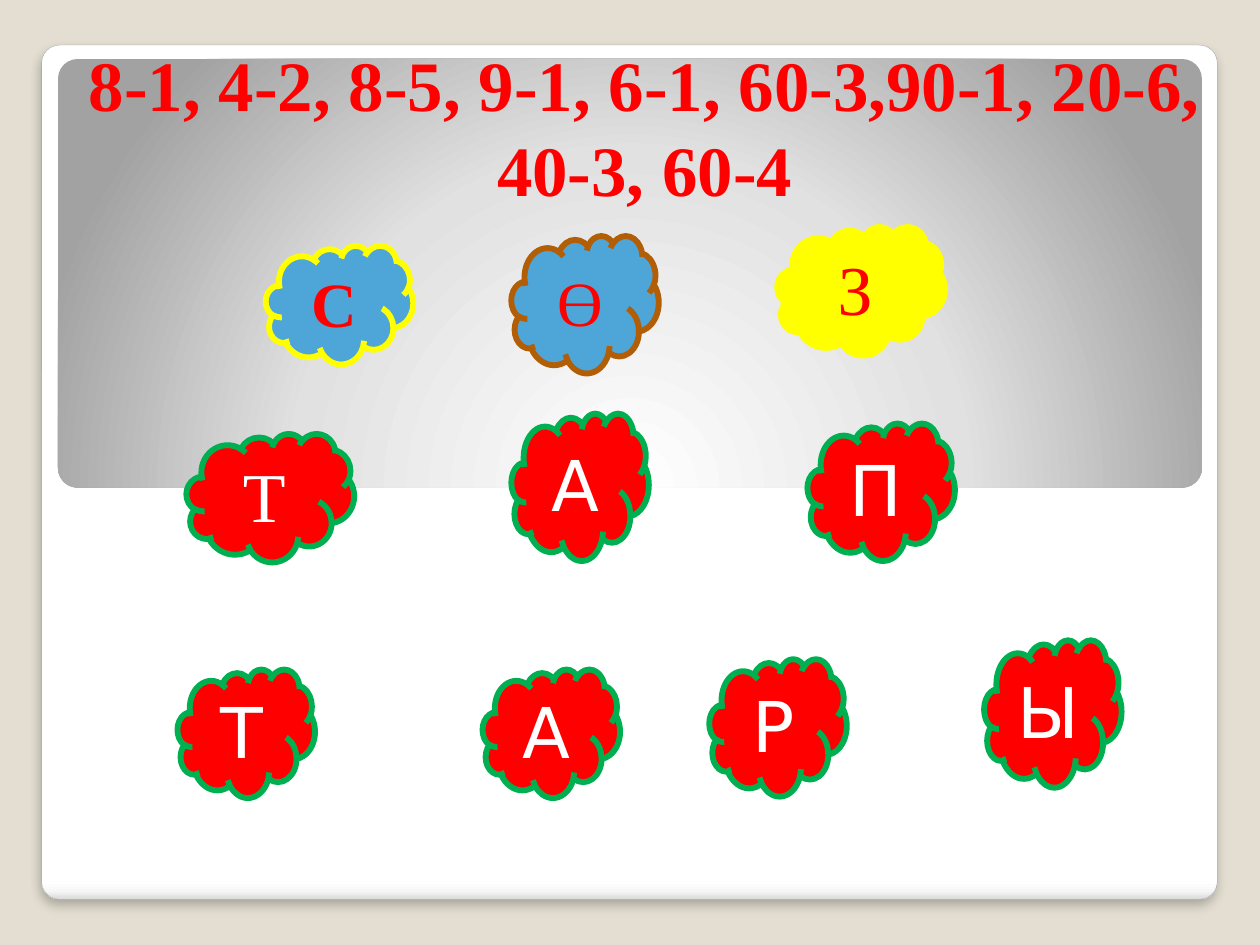
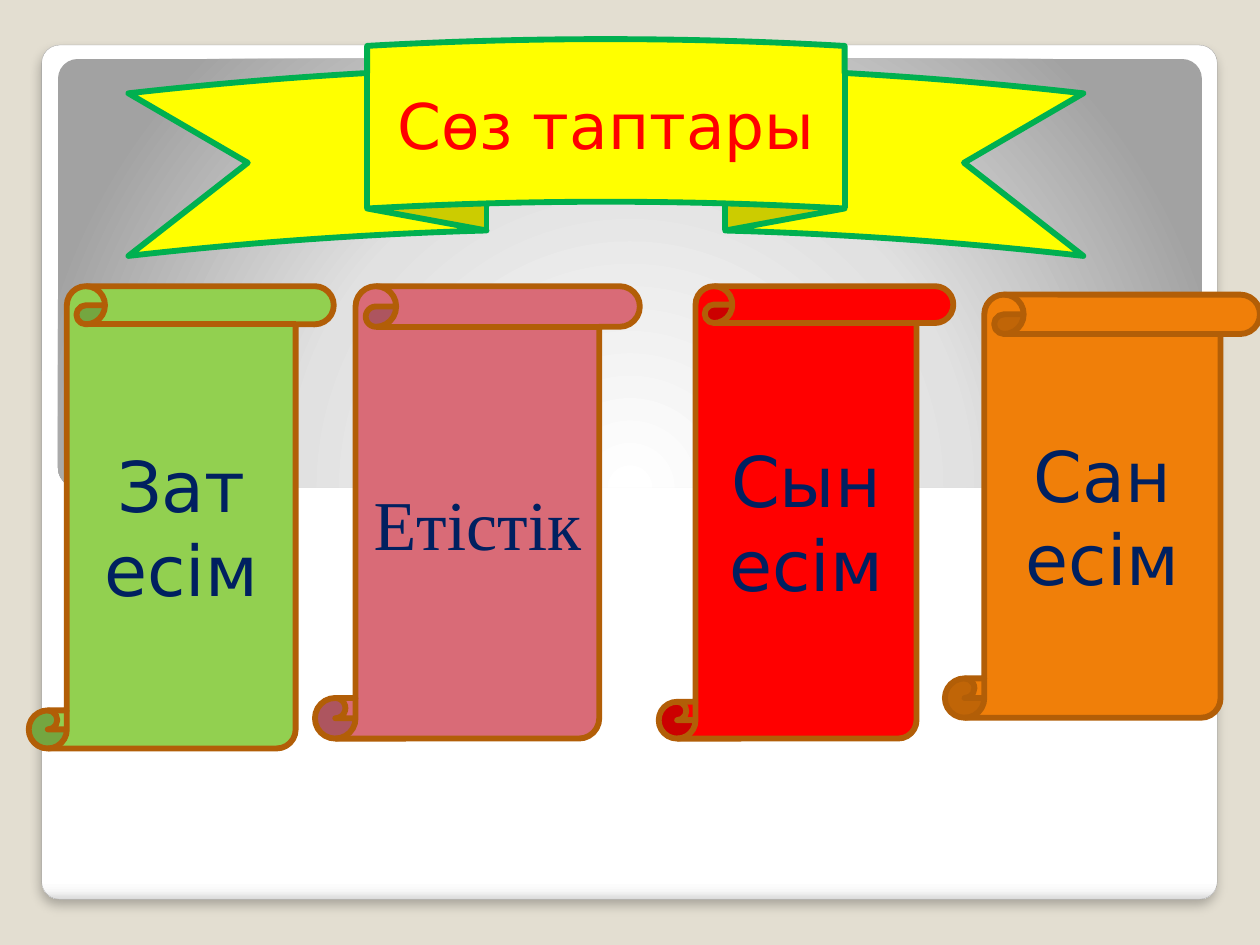
from lxml import etree
from pptx import Presentation
from pptx import util as u
from pptx.dml.color import RGBColor
from pptx.enum import shapes, text
from pptx.oxml import parse_xml
from pptx.oxml.ns import nsdecls, qn

SERIF, SANS = "Times New Roman", "DejaVu Sans"
RED, YELLOW, GREEN, BLUE = "FF0000", "FFFF00", "00B050", "4EA5D8"
BROWN, NAVY, WHITE, BEIGE = "B25E07", "002060", "FFFFFF", "E3DED1"
OUTLINE = 3.35
KIND = shapes.MSO_SHAPE


def color(hex_string):
    return RGBColor.from_string(hex_string)


class Deck:
    """Holds the shared style and the current slide."""

    def __init__(self):
        self.presentation = Presentation()
        self.presentation.slide_width = u.Cm(25.4)
        self.presentation.slide_height = u.Cm(19.05)

    def new_slide(self, title=None):
        layout = self.presentation.slide_layouts[6 if title is None else 5]
        self.slide = self.presentation.slides.add_slide(layout)
        background = self.slide.background.fill
        background.solid()
        background.fore_color.rgb = color(BEIGE)
        self.panels()
        if title is not None:
            self.title(title)

    # Shared backdrop: white card with a grey band on top
    def panels(self):
        card = self.shape(KIND.ROUNDED_RECTANGLE, (0.84, 0.91, 23.7, 17.22),
                          line="A4A4A4", width=0.16)
        card.adjustments[0] = 0.021
        self.gradient(card, [(0, WHITE), (98, WHITE), (99, "F7F7F7"), (100, "DADADA")],
                      '<a:lin ang="5400000" scaled="0"/>')
        effects = card._element.spPr.find(qn("a:effectLst"))
        effects.append(parse_xml(
            f'<a:outerShdw {nsdecls("a")} blurRad="{u.Pt(6)}" dist="{u.Pt(4)}" '
            'dir="5400000" algn="t" rotWithShape="0"><a:srgbClr val="000000">'
            '<a:alpha val="25000"/></a:srgbClr></a:outerShdw>'))

        band = self.shape(KIND.ROUNDED_RECTANGLE, (1.17, 1.19, 23.06, 8.64))
        band.adjustments[0] = 0.046
        self.gradient(band, [(0, WHITE), (55, "E1E1E1"), (100, "A2A2A2")],
                      '<a:path path="circle"><a:fillToRect l="50000" t="175000" '
                      'r="50000" b="-75000"/></a:path>')

    def gradient(self, shape, stops, direction):
        shape.fill.gradient()
        fill = shape._element.spPr.find(qn("a:gradFill"))
        for child in list(fill):
            fill.remove(child)
        stop_list = etree.SubElement(fill, qn("a:gsLst"))
        for position, hex_string in stops:
            stop = etree.SubElement(stop_list, qn("a:gs"), pos=str(position * 1000))
            etree.SubElement(stop, qn("a:srgbClr"), val=hex_string)
        fill.append(parse_xml(direction.replace(" ", f' {nsdecls("a")} ', 1)))

    def title(self, words):
        title = self.slide.shapes.title
        self.slide.shapes._spTree.append(title._element)  # in front of the panels
        self.place(title, (1.19, 0.99, 23.62, 3.38))
        frame = title.text_frame
        frame.margin_left = frame.margin_right = u.Cm(0.13)
        frame.margin_top = frame.margin_bottom = u.Cm(0.13)
        frame.auto_size = text.MSO_AUTO_SIZE.NONE
        self.set_text(title, words, SERIF, 40.5, RED, bold=True,
                      anchor=text.MSO_ANCHOR.BOTTOM)

    def place(self, shape, box):
        shape.left, shape.top, shape.width, shape.height = map(u.Cm, box)

    def shape(self, kind, box, fill=None, line=None, width=OUTLINE):
        shape = self.slide.shapes.add_shape(kind, *map(u.Cm, box))
        shape.shadow.inherit = False
        if fill:
            shape.fill.solid()
            shape.fill.fore_color.rgb = color(fill)
        if line:
            shape.line.color.rgb = color(line)
            shape.line.width = u.Pt(width)
        else:
            shape.line.fill.background()
        return shape

    def set_text(self, shape, words, font, size, ink, bold=False,
                 anchor=text.MSO_ANCHOR.MIDDLE):
        frame = shape.text_frame
        frame.text = words
        frame.word_wrap = True
        frame.vertical_anchor = anchor
        paragraph = frame.paragraphs[0]
        paragraph.alignment = text.PP_ALIGN.CENTER
        for run in paragraph.runs:
            run.font.name = font
            run.font.size = u.Pt(size)
            run.font.bold = bold
            run.font.color.rgb = color(ink)

    def cloud(self, letter, box, fill=RED, line=GREEN, font=SANS, size=40,
              ink=WHITE, bold=False):
        cloud = self.shape(KIND.CLOUD, box, fill, line)
        self.set_text(cloud, letter, font, size, ink, bold)

    def ribbon(self, words, box):
        ribbon = self.shape(KIND.CURVED_UP_RIBBON, box, YELLOW, GREEN)
        self.set_text(ribbon, words, SANS, 36, RED)

    def scroll(self, words, box, fill, font=SANS):
        scroll = self.shape(KIND.VERTICAL_SCROLL, box, fill, BROWN)
        self.set_text(scroll, words, font, 40, NAVY)


def letters_slide(deck):
    deck.new_slide("8-1, 4-2, 8-5, 9-1, 6-1, 60-3,90-1, 20-6, 40-3, 60-4")
    # First row: each cloud has its own look
    deck.cloud("С", (5.36, 4.95, 2.97, 2.39), BLUE, YELLOW, SERIF, 36, RED, bold=True)
    deck.cloud("Ө", (10.31, 4.75, 2.97, 2.77), BLUE, BROWN, SERIF, 36, RED)
    deck.cloud("З", (15.67, 4.57, 3.38, 2.59), YELLOW, YELLOW, SERIF, ink=RED)
    # Red clouds
    deck.cloud("Т", (3.76, 8.74, 3.38, 2.59), font=SERIF)
    for letter, box in [
        ("А", (10.31, 8.33, 2.77, 2.97)),
        ("А", (9.73, 13.49, 2.77, 2.59)),
        ("Р", (14.3, 13.28, 2.77, 2.77)),
        ("П", (16.28, 8.53, 2.97, 2.77)),
        ("Ы", (19.84, 12.9, 2.77, 2.97)),
        ("Т", (3.58, 13.49, 2.77, 2.59)),
    ]:
        deck.cloud(letter, box)


def word_classes_slide(deck):
    deck.new_slide()
    deck.ribbon("Сөз таптары", (2.59, 0.79, 19.25, 4.37))
    # One scroll per word class
    deck.scroll("Зат есім", (0.58, 5.77, 6.15, 9.32), "92D050")
    deck.scroll("Етістік", (6.35, 5.77, 6.55, 9.12), "D96B77", SERIF)
    deck.scroll("Сын есім", (13.28, 5.77, 5.94, 9.12), RED)
    deck.scroll("Сан есім", (19.05, 5.94, 6.35, 8.53), "F07F09")


def main():
    deck = Deck()
    letters_slide(deck)
    word_classes_slide(deck)
    deck.presentation.save("out.pptx")


if __name__ == "__main__":
    main()
